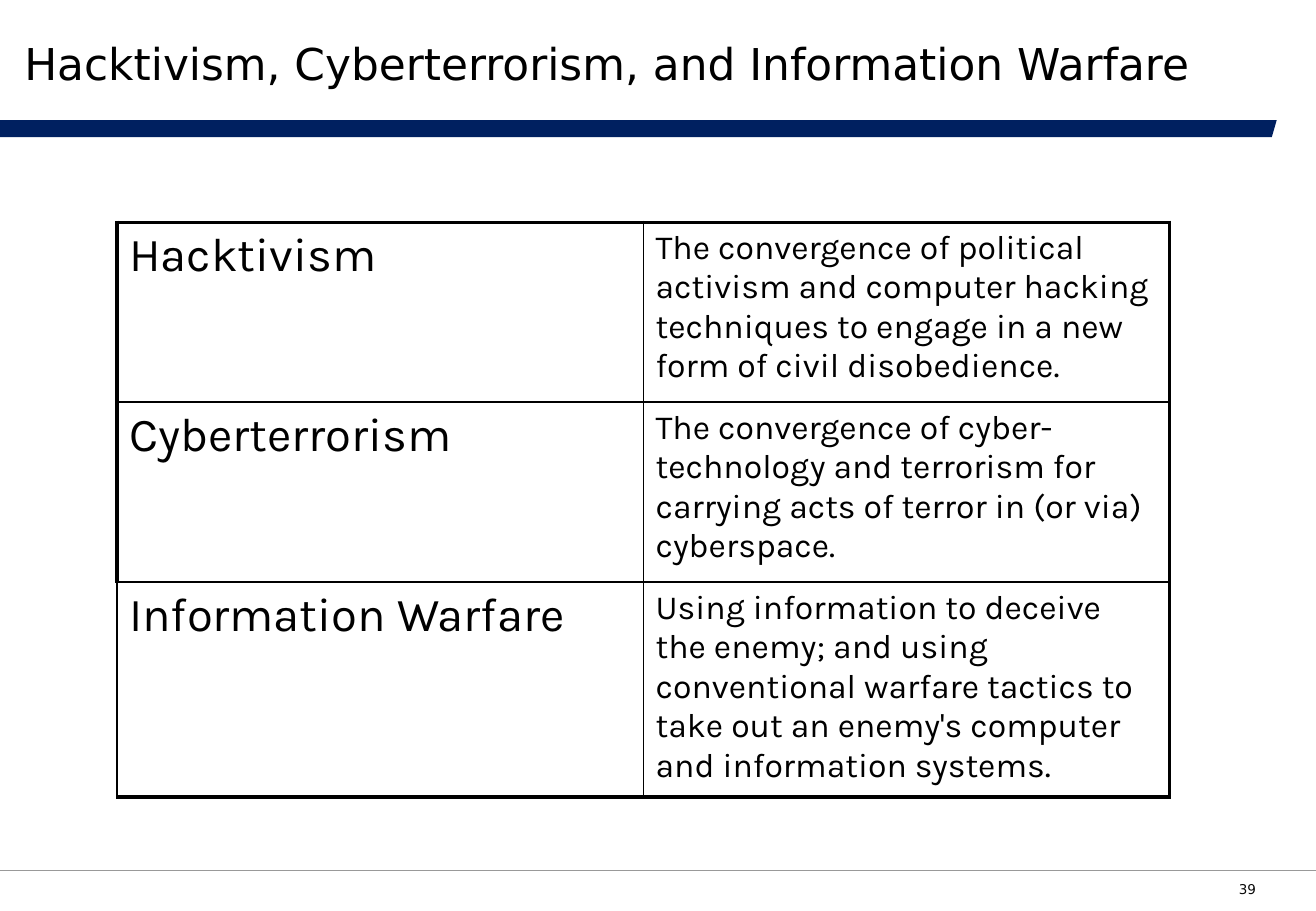
from dataclasses import dataclass

from lxml.etree import SubElement
from pptx import Presentation
from pptx.dml.color import RGBColor
from pptx.enum.shapes import MSO_CONNECTOR
from pptx.enum.text import MSO_ANCHOR, PP_ALIGN
from pptx.oxml.ns import qn
from pptx.slide import Slide
from pptx.table import _Cell
from pptx.text.text import TextFrame
from pptx.util import Pt

WIDTH, HEIGHT = 780, 540
THIN, THICK = 1, 2.25


@dataclass
class Term:
    name: str
    meaning: str
    height: float
    left: float = THICK


TERMS = [
    Term("Hacktivism",
         "The convergence of political activism and computer hacking "
         "techniques to engage in a new form of civil disobedience.", 106.6),
    Term("Cyberterrorism",
         "The convergence of cyber-technology and terrorism for carrying "
         "acts of terror in (or via) cyberspace.", 106.6),
    Term("Information Warfare",
         "Using information to deceive the enemy; and using conventional "
         "warfare tactics to take out an enemy's computer and information "
         "systems.", 127.4, THIN),
]


def color(code: str) -> RGBColor:
    return RGBColor.from_string(code)


def write(frame: TextFrame, text: str, size: float, font: str = "DejaVu Sans",
          fill: str = "000000", align: PP_ALIGN = PP_ALIGN.LEFT) -> None:
    para = frame.paragraphs[0]
    para.alignment = align
    run = para.add_run()
    run.text = text
    run.font.size = Pt(size)
    run.font.name = font
    run.font.color.rgb = color(fill)


def add_box(slide: Slide, area: tuple[float, ...], pads: tuple[float, ...],
            anchor: MSO_ANCHOR, wrap: bool = True) -> TextFrame:
    """Add a text box; pads run left, top, right, bottom."""
    frame = slide.shapes.add_textbox(*map(Pt, area)).text_frame
    frame.word_wrap = wrap
    frame.vertical_anchor = anchor
    (frame.margin_left, frame.margin_top,
     frame.margin_right, frame.margin_bottom) = map(Pt, pads)
    return frame


def add_bar(slide: Slide) -> None:
    top, base = Pt(71.3), Pt(81.4)
    pen = slide.shapes.build_freeform(0, top)
    pen.add_line_segments([(Pt(756.7), top), (Pt(753.8), base), (0, base)])
    bar = pen.convert_to_shape()
    bar.shadow.inherit = False
    bar.fill.solid()
    bar.fill.fore_color.rgb = color("002060")
    bar.line.fill.background()


def add_rule(slide: Slide) -> None:
    level = Pt(516)
    rule = slide.shapes.add_connector(
        MSO_CONNECTOR.STRAIGHT, 0, level, Pt(WIDTH), level)
    rule.line.color.rgb = color("999999")
    rule.line.width = Pt(1)
    SubElement(rule._element.spPr, qn("a:effectLst"))


def set_edges(cell: _Cell, **edges: float) -> None:
    """Draw black borders; keys L, R, T, B in that order give widths."""
    props = cell._tc.get_or_add_tcPr()
    for side, width in edges.items():
        line = SubElement(props, qn(f"a:ln{side}"), w=str(Pt(width)))
        fill = SubElement(line, qn("a:solidFill"))
        SubElement(fill, qn("a:srgbClr"), val="000000")


def add_terms(slide: Slide) -> None:
    total = sum(term.height for term in TERMS)
    table = slide.shapes.add_table(
        len(TERMS), 2, Pt(69.4), Pt(131.8), Pt(624), Pt(total)).table
    table.first_row = table.horz_banding = False
    last = len(TERMS) - 1
    for row, term in enumerate(TERMS):
        table.rows[row].height = Pt(term.height)
        for col, (text, size) in enumerate([(term.name, 28), (term.meaning, 20)]):
            cell = table.cell(row, col)
            write(cell.text_frame, text, size, font="Karla")
            set_edges(cell,
                      L=THIN if col else term.left,
                      R=THICK if col else THIN,
                      T=THIN if row else THICK,
                      B=THICK if row == last else THIN)
            cell.fill.background()


def main() -> None:
    deck = Presentation()
    deck.slide_width, deck.slide_height = Pt(WIDTH), Pt(HEIGHT)
    slide = deck.slides.add_slide(deck.slide_layouts[6])
    add_bar(slide)
    page = add_box(slide, (726.5, 521.3, 25.9, 12.2), (0, 3.6, 0, 1.4),
                   MSO_ANCHOR.BOTTOM, wrap=False)
    write(page, "39", 8, fill="080808", align=PP_ALIGN.CENTER)
    add_rule(slide)
    title = add_box(slide, (14.4, 4.3, 733.7, 65.5), (0, 0, 5.8, 0),
                    MSO_ANCHOR.MIDDLE)
    write(title, "Hacktivism, Cyberterrorism, and Information Warfare", 26)
    add_terms(slide)
    deck.save("out.pptx")


if __name__ == "__main__":
    main()
